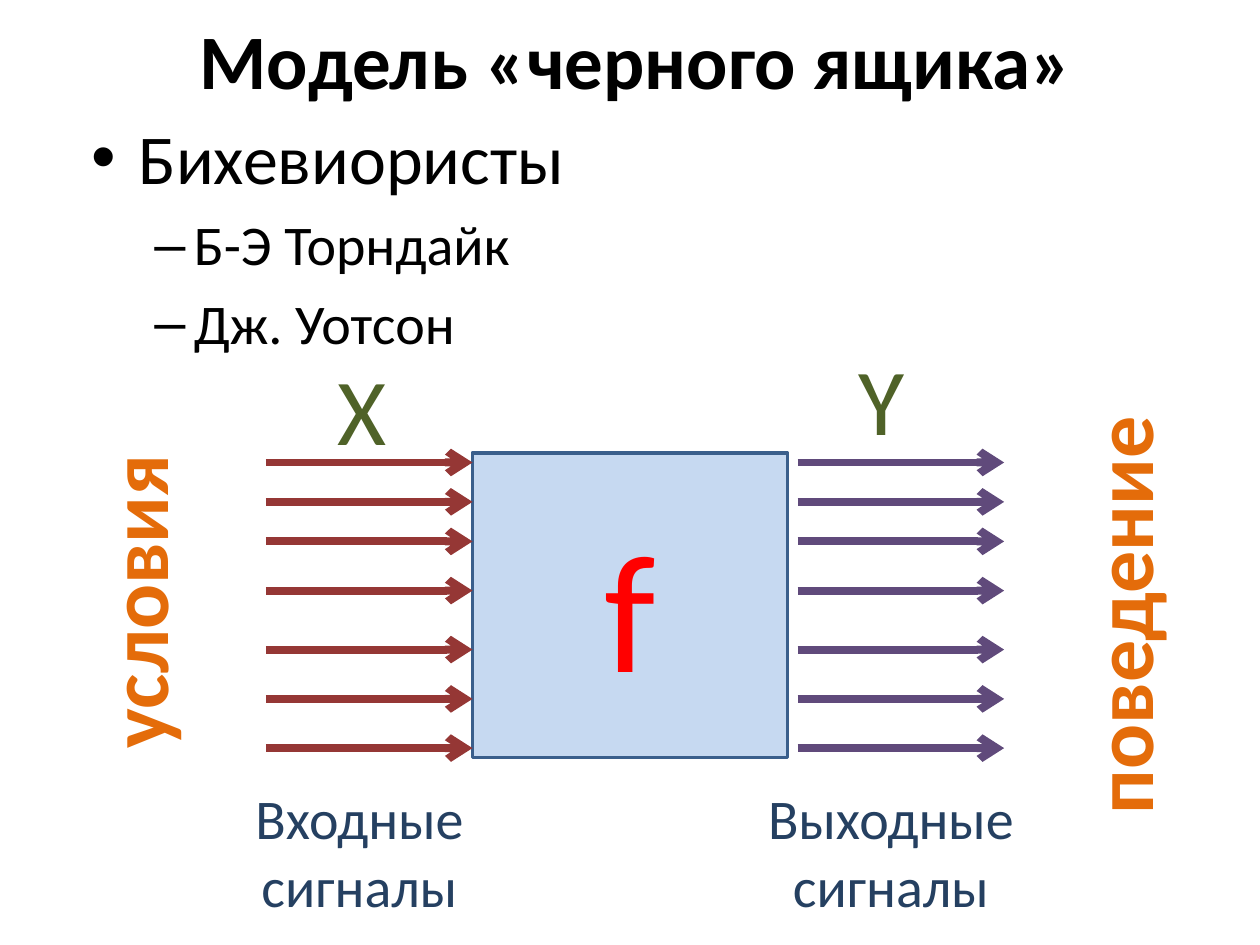
from lxml.etree import SubElement
from pptx import Presentation
from pptx.dml.color import RGBColor
from pptx.enum.shapes import MSO_CONNECTOR, MSO_SHAPE
from pptx.enum.text import MSO_ANCHOR, MSO_AUTO_SIZE, PP_ALIGN
from pptx.oxml.ns import qn
from pptx.util import Pt

BLACK = RGBColor(0x00, 0x00, 0x00)
BOX_FILL = RGBColor(0xC6, 0xD9, 0xF1)
BOX_LINE = RGBColor(0x3A, 0x5F, 0x8C)
RED = RGBColor(0xFF, 0x00, 0x00)
INPUT_RED = RGBColor(0x95, 0x37, 0x35)
OUTPUT_PURPLE = RGBColor(0x60, 0x4A, 0x7B)
GREEN = RGBColor(0x4F, 0x62, 0x28)
NAVY = RGBColor(0x25, 0x40, 0x61)
ORANGE = RGBColor(0xE4, 0x6C, 0x0A)


def format_text(paragraph, size, color, bold=False):
    for run in paragraph.runs:
        run.font.name = "Calibri"
        run.font.size = Pt(size)
        run.font.bold = bold
        run.font.color.rgb = color


def place(shape, left, top, width, height):
    shape.left, shape.top = Pt(left), Pt(top)
    shape.width, shape.height = Pt(width), Pt(height)


presentation = Presentation()
presentation.slide_width, presentation.slide_height = Pt(720), Pt(540)
slide = presentation.slides.add_slide(presentation.slide_layouts[1])

# Title
title = slide.shapes.title
place(title, 39.6, 0, 648, 67.5)
title.text_frame.text = "Модель «черного ящика»"
title.text_frame.vertical_anchor = MSO_ANCHOR.MIDDLE
format_text(title.text_frame.paragraphs[0], 44, BLACK, bold=True)

# List of behaviourists
body = slide.placeholders[1]
place(body, 45, 62, 648, 138)
body.text_frame.text = "Бихевиористы\nБ-Э Торндайк\nДж. Уотсон"
body.text_frame.auto_size = MSO_AUTO_SIZE.NONE
for paragraph, level in zip(body.text_frame.paragraphs, (0, 1, 1)):
    paragraph.level = level
    format_text(paragraph, 32 if level else 40, BLACK)

# Black box
box = slide.shapes.add_shape(MSO_SHAPE.RECTANGLE, Pt(270), Pt(258.75), Pt(180), Pt(174.25))
box.shadow.inherit = False
box.fill.solid()
box.fill.fore_color.rgb = BOX_FILL
box.line.color.rgb = BOX_LINE
box.line.width = Pt(2)
box.text_frame.text = "f"
box.text_frame.vertical_anchor = MSO_ANCHOR.MIDDLE
box.text_frame.paragraphs[0].alignment = PP_ALIGN.CENTER
format_text(box.text_frame.paragraphs[0], 96, RED)

# Input and output arrows
ARROW_LENGTH = 118
ARROW_TOPS = (264.3, 286.8, 309.4, 337.5, 371.2, 399.4, 427.5)
for left, color in ((152, INPUT_RED), (455.8, OUTPUT_PURPLE)):
    group = slide.shapes.add_group_shape()
    for top in ARROW_TOPS:
        arrow = group.shapes.add_connector(
            MSO_CONNECTOR.STRAIGHT, Pt(left), Pt(top), Pt(left + ARROW_LENGTH), Pt(top))
        arrow.line.color.rgb = color
        arrow.line.width = Pt(4.5)
        SubElement(arrow.line._get_or_add_ln(), qn("a:tailEnd"), type="arrow")
        SubElement(arrow._element.spPr, qn("a:effectLst"))

# Labels: text, left, top, width, height, size, colour, alignment, vertical
LABELS = (
    ("X", 186, 196.9, 45, 72.7, 54, GREEN, PP_ALIGN.LEFT, False),
    ("Y", 483.8, 191.2, 45, 72.7, 54, GREEN, PP_ALIGN.LEFT, False),
    ("Входные сигналы", 123.8, 444.4, 163.4, 85, 32, NAVY, PP_ALIGN.CENTER, False),
    ("Выходные сигналы", 427.5, 444.4, 163.4, 85, 32, NAVY, PP_ALIGN.CENTER, False),
    ("условия", 45, 247.5, 72.7, 192.3, 48, ORANGE, PP_ALIGN.CENTER, True),
    ("поведение", 607.5, 230.6, 72.7, 242, 48, ORANGE, PP_ALIGN.CENTER, True),
)
for text, left, top, width, height, size, color, alignment, vertical in LABELS:
    label = slide.shapes.add_textbox(Pt(left), Pt(top), Pt(width), Pt(height))
    label.text_frame.word_wrap = True
    label.text_frame.text = text
    if vertical:
        label.text_frame._txBody.bodyPr.set("vert", "vert270")
    label.text_frame.paragraphs[0].alignment = alignment
    format_text(label.text_frame.paragraphs[0], size, color, bold=vertical)

presentation.save("out.pptx")
